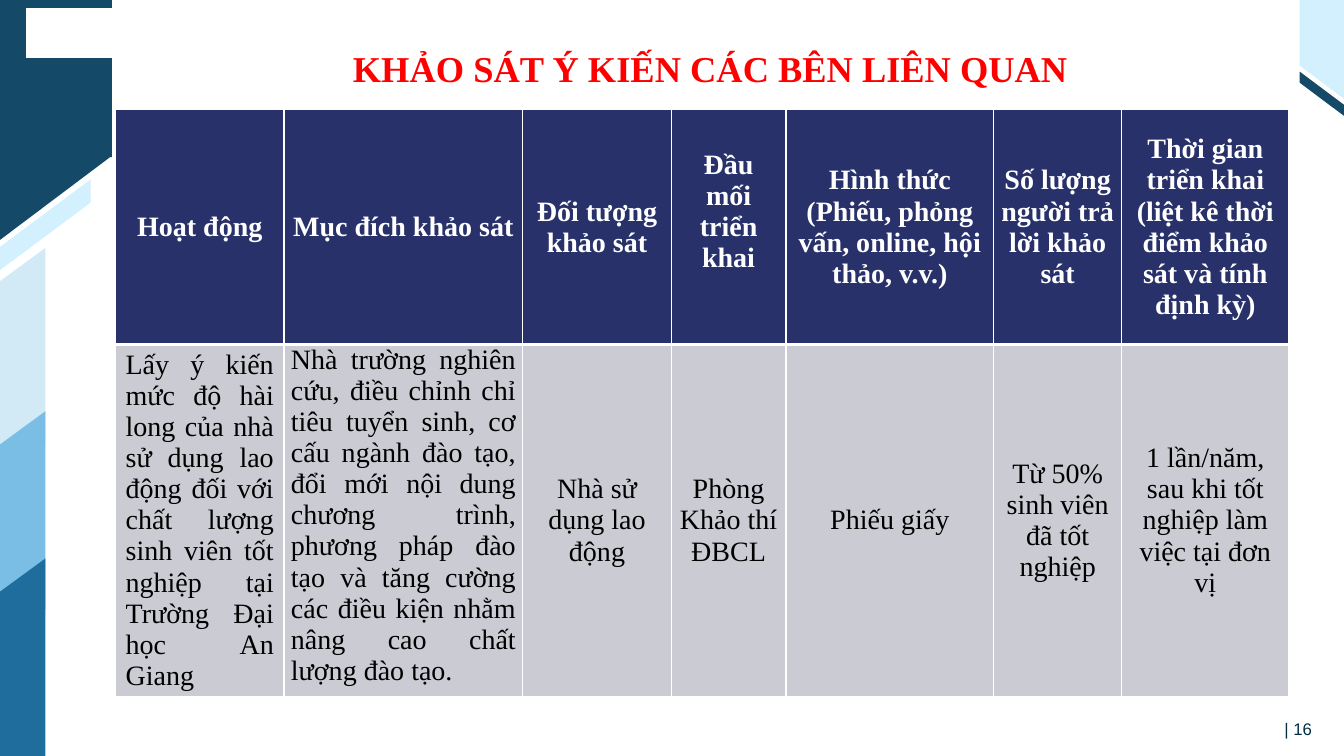
from dataclasses import dataclass

from lxml.etree import SubElement
from pptx import Presentation
from pptx.dml.color import RGBColor
from pptx.enum.text import MSO_ANCHOR as Anchor, PP_ALIGN as Align
from pptx.oxml.ns import qn
from pptx.util import Emu, Inches, Pt

COLORS = {
    "navy": "144967", "ice": "D2F0FE", "pale": "D2E9F6", "sky": "7ABDE5",
    "blue": "1E6D9C", "white": "FFFFFF", "header": "28316A", "body": "CBCCD3",
    "title": "FF0000", "number": "012E45", "black": "000000",
}
SERIF = "Times New Roman"
WIDTH, HEIGHT = Inches(13.333), Inches(7.5)


def across(percent: float) -> Emu:
    """Share of the slide width."""
    return Emu(round(WIDTH * percent / 100))


def down(percent: float) -> Emu:
    """Share of the slide height."""
    return Emu(round(HEIGHT * percent / 100))


@dataclass
class Panel:
    color: str
    points: list[tuple[float, float]]


@dataclass
class Column:
    width: float
    heading: list[str]
    entry: str
    entry_align: Align = Align.CENTER
    entry_anchor: Anchor = Anchor.MIDDLE
    roomy: bool = False
    heading_lift: float = 0


def side_tile(color: str, top: float) -> Panel:
    return Panel(color, [(0, top + 4.4), (3.38, top), (3.38, top + 26.13), (0, top + 26.13)])


PANELS = [
    Panel("navy", [(0, 0), (8.33, 0), (8.33, 20.8), (8.18, 20.8), (0, 31.73)]),
    Panel("ice", [(0, 32.67), (6.75, 23.73), (6.75, 26.8), (0, 35.73)]),
    Panel("white", [(1.95, 1.07), (15.38, 1.07), (15.38, 7.73), (1.95, 7.73)]),
    side_tile("pale", 32.8),
    side_tile("sky", 54.4),
    side_tile("blue", 73.87),
    Panel("navy", [(96.7, 9.47), (100, 13.87), (100, 15.33), (96.7, 10.93)]),
    Panel("ice", [(96.7, 0), (100, 0), (100, 13.07), (96.7, 8.67)]),
]

COLUMNS = [
    Column(12.53, ["Hoạt động"],
           "Lấy ý kiến mức độ hài long của nhà sử dụng lao động đối với chất lượng "
           "sinh viên tốt nghiệp tại Trường Đại học An Giang",
           Align.JUSTIFY, Anchor.TOP, roomy=True),
    Column(17.78, ["Mục đích khảo sát"],
           "Nhà trường nghiên cứu, điều chỉnh chỉ tiêu tuyển sinh, cơ cấu ngành đào tạo, "
           "đổi mới nội dung chương trình, phương pháp đào tạo và tăng cường các điều kiện "
           "nhằm nâng cao chất lượng đào tạo.",
           Align.JUSTIFY, Anchor.TOP),
    Column(11.03, ["Đối tượng khảo sát"], "Nhà sử dụng lao động"),
    Column(8.55, ["Đầu mối triển khai"], "Phòng Khảo thí ĐBCL", heading_lift=4.1),
    Column(15.45, ["Hình thức (Phiếu, phỏng vấn, online, hội thảo, v.v.)"], "Phiếu giấy"),
    Column(9.53, ["Số lượng người trả lời khảo sát"], "Từ 50% sinh viên đã tốt nghiệp"),
    Column(12.45, ["Thời gian triển khai", "(liệt kê thời điểm khảo sát và tính định kỳ)"],
           "1 lần/năm, sau khi tốt nghiệp làm việc tại đơn vị"),
]
ROW_HEIGHTS = [31.07, 46.53]


def rgb(name: str) -> RGBColor:
    return RGBColor.from_string(COLORS[name])


def write(frame, lines: list[str], color: str, align: Align, **font_format) -> None:
    for index, line in enumerate(lines):
        paragraph = frame.add_paragraph() if index else frame.paragraphs[0]
        paragraph.alignment = align
        run = paragraph.add_run()
        run.text = line
        for name, value in font_format.items():
            setattr(run.font, name, value)
        run.font.color.rgb = rgb(color)


def draw_panel(slide, panel: Panel) -> None:
    first, *rest = [(across(x), down(y)) for x, y in panel.points]
    builder = slide.shapes.build_freeform(*first)
    builder.add_line_segments(rest, close=True)
    shape = builder.convert_to_shape()
    shape.shadow.inherit = False
    shape.fill.solid()
    shape.fill.fore_color.rgb = rgb(panel.color)
    shape.line.fill.background()


def place(shape, left: float, top: float, width: float, height: float) -> None:
    shape.left, shape.top = across(left), down(top)
    shape.width, shape.height = across(width), down(height)


def add_borders(cell, **widths: float) -> None:
    properties = cell._tc.get_or_add_tcPr()
    for side in "LRTB":
        line = SubElement(properties, qn(f"a:ln{side}"), w=str(Pt(widths.get(side, 1))))
        fill = SubElement(line, qn("a:solidFill"))
        SubElement(fill, qn("a:srgbClr"), val=COLORS["white"])


def style_cell(cell, fill: str, anchor: Anchor, roomy: bool, lift: float = 0) -> None:
    side, edge = (0.1, 0.05) if roomy else (0.07, 0)
    cell_format = {
        "margin_left": Inches(side), "margin_right": Inches(side),
        "margin_top": Inches(edge), "margin_bottom": Inches(edge) + down(lift),
        "vertical_anchor": anchor,
    }
    for name, value in cell_format.items():
        setattr(cell, name, value)
    cell.fill.solid()
    cell.fill.fore_color.rgb = rgb(fill)


def draw_survey_table(slide) -> None:
    frame = slide.shapes.add_table(
        len(ROW_HEIGHTS), len(COLUMNS), across(8.6), down(14.5),
        across(sum(column.width for column in COLUMNS)), down(sum(ROW_HEIGHTS)))
    table = frame.table
    for row, height in zip(table.rows, ROW_HEIGHTS):
        row.height = down(height)
    for index, column in enumerate(COLUMNS):
        table.columns[index].width = across(column.width)
        heading, entry = table.cell(0, index), table.cell(1, index)
        add_borders(heading, B=3)
        add_borders(entry, T=3)
        style_cell(heading, "header", Anchor.MIDDLE, column.roomy, column.heading_lift)
        style_cell(entry, "body", column.entry_anchor, column.roomy)
        write(heading.text_frame, column.heading, "white", Align.CENTER,
              name=SERIF, size=Pt(20), bold=True)
        write(entry.text_frame, [column.entry], "black", column.entry_align,
              name=SERIF, size=Pt(20), bold=False)


def main() -> None:
    presentation = Presentation()
    presentation.slide_width, presentation.slide_height = WIDTH, HEIGHT
    slide = presentation.slides.add_slide(presentation.slide_layouts[5])

    for panel in PANELS:
        draw_panel(slide, panel)

    title = slide.shapes.title
    place(title, 10.8, 3.33, 84.15, 11.2)
    title.text_frame.vertical_anchor = Anchor.MIDDLE
    write(title.text_frame, ["KHẢO SÁT Ý KIẾN CÁC BÊN LIÊN QUAN"], "title", Align.CENTER,
          name=SERIF, size=Pt(26), bold=True)

    draw_survey_table(slide)

    number = slide.shapes.add_textbox(across(95.03), down(94.4), across(4.97), down(4))
    number.text_frame.word_wrap = True
    number.text_frame.margin_left = Inches(0.07)
    write(number.text_frame, ["| 16"], "number", Align.LEFT, name="Arial", size=Pt(12))

    presentation.save("out.pptx")


if __name__ == "__main__":
    main()
